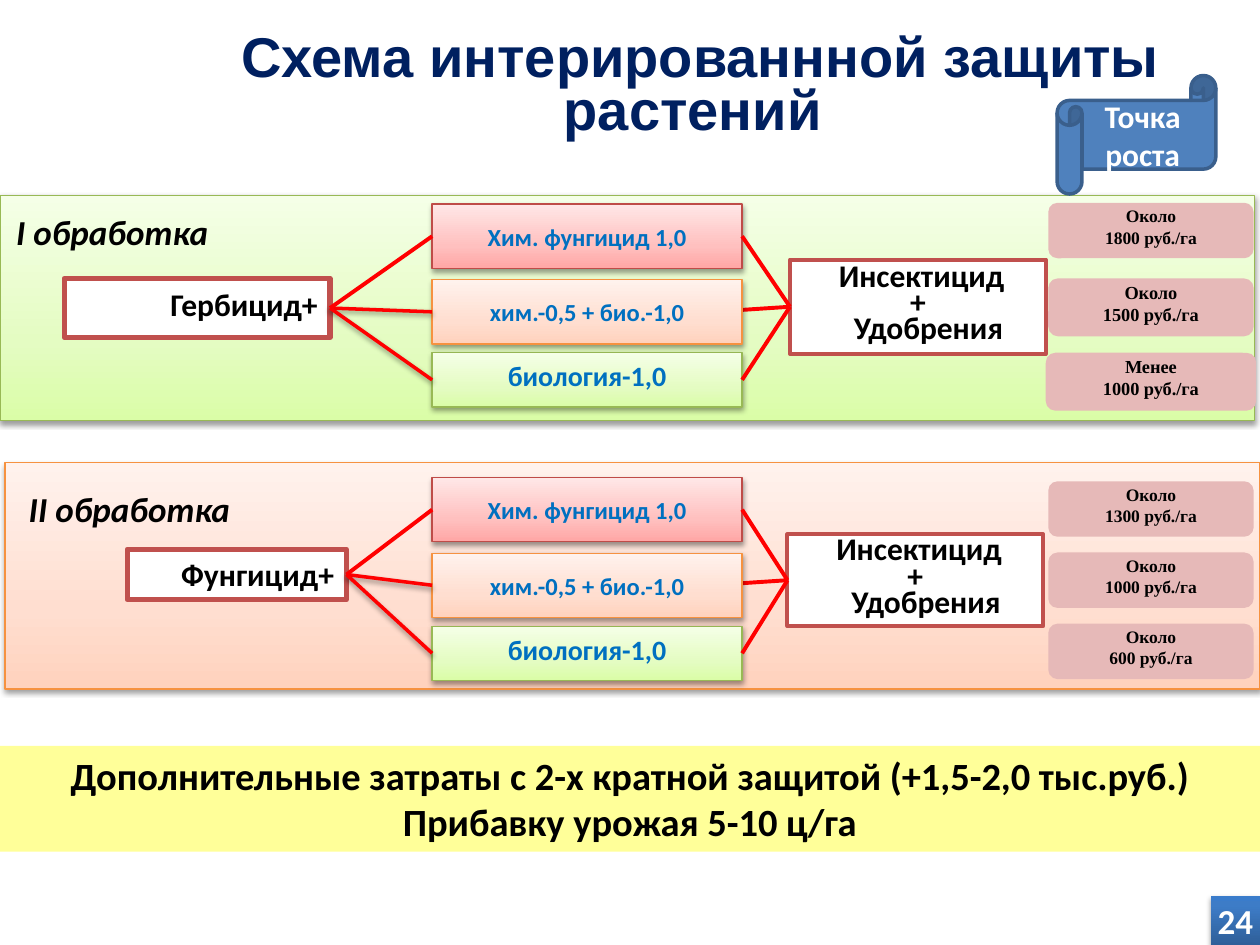
from copy import deepcopy

from lxml import etree
from pptx import Presentation
from pptx.dml.color import RGBColor
from pptx.enum.shapes import MSO_CONNECTOR, MSO_SHAPE
from pptx.enum.text import MSO_ANCHOR, MSO_AUTO_SIZE, PP_ALIGN
from pptx.oxml.ns import qn
from pptx.util import Inches, Pt

RECTANGLE = MSO_SHAPE.RECTANGLE
ROUNDED = MSO_SHAPE.ROUNDED_RECTANGLE
SCROLL = MSO_SHAPE.HORIZONTAL_SCROLL
STRAIGHT = MSO_CONNECTOR.STRAIGHT
TOP, MIDDLE = MSO_ANCHOR.TOP, MSO_ANCHOR.MIDDLE
LEFT, CENTER, RIGHT = PP_ALIGN.LEFT, PP_ALIGN.CENTER, PP_ALIGN.RIGHT
LEFT_SIDE, RIGHT_SIDE = 1, 3

WIDTH, HEIGHT = Inches(10), Inches(7.5)
COLUMN, ROW = WIDTH / 100, HEIGHT / 75

COLORS = {
    "title": "002060", "text": "000000", "option": "0070C0", "white": "FFFFFF",
    "banner": "FFFF99", "price": "E6B9B8", "frame": "C0504D", "arrow": "FF0000",
    "scroll": "4F81BD", "scroll_line": "3A5F8C",
    "green_line": "98B955", "orange_line": "F69240", "red_line": "BF4C48",
}
GRADIENTS = {
    "green": [(0, "DAFDA7"), (0.35, "E4FCC2"), (1, "F5FFE7")],
    "orange": [(0, "FFD2BD"), (0.35, "FFDED0"), (1, "FFF2ED")],
    "red": [(0, "FFA6A5"), (0.35, "FFC0BF"), (1, "FFE7E7")],
    "blue": [(0, "2F5F99"), (0.8, "3D7CC7"), (1, "3A7CCB")],
}

OPTION_LEFT, OPTION_WIDTH = 34.3, 24.6
STAGES = [
    {
        "name": "I обработка", "name_at": (0.3, 16.2, 23.3, 5.1),
        "panel": (0, 15.5, 99.6, 17.9), "tint": "green",
        "start": "Гербицид+", "start_at": (5.1, 22.1, 21.1, 4.7),
        "finish_at": (62.7, 20.6, 20.3, 7.5), "options_top": 16.2,
        "prices": [
            ("Около", "1800 руб./га", (83.2, 16.1, 16.3, 4.4), 10),
            ("Около", "1500 руб./га", (83.2, 22.1, 16.3, 4.6), 10.5),
            ("Менее", "1000 руб./га", (83, 28, 16.7, 4.6), 10.5),
        ],
    },
    {
        "name": "II обработка", "name_at": (1.3, 38.2, 24.3, 5.1),
        "panel": (0.4, 36.7, 99.6, 18), "tint": "orange",
        "start": "Фунгицид+", "start_at": (10.1, 43.6, 17.4, 4),
        "finish_at": (62.5, 42.4, 20.3, 7.3), "options_top": 37.9,
        "prices": [
            ("Около", f"{price} руб./га", (83.2, 38.2 + 5.65 * index, 16.3, 4.4), 10)
            for index, price in enumerate((1300, 1000, 600))
        ],
    },
]


def color(name):
    return RGBColor.from_string(COLORS[name])


def place(left, top, width, height):
    return [round(value) for value in
            (left * COLUMN, top * ROW, width * COLUMN, height * ROW)]


def add_shadow(shape, alpha=38):
    effects = shape._element.spPr.find(qn("a:effectLst"))
    shadow = etree.SubElement(effects, qn("a:outerShdw"), blurRad=str(Pt(3.1)),
                              dist=str(Pt(1.6)), dir="5400000", rotWithShape="0")
    black = etree.SubElement(shadow, qn("a:srgbClr"), val="000000")
    etree.SubElement(black, qn("a:alpha"), val=str(alpha * 1000))


def fill_gradient(shape, stops):
    shape.fill.gradient()
    shape.fill.gradient_angle = 90
    stop_list = shape._element.spPr.find(".//" + qn("a:gsLst"))
    stop_list.append(deepcopy(stop_list[0]))
    for stop, (position, value) in zip(shape.fill.gradient_stops, stops):
        stop.position = position
        stop.color.rgb = RGBColor.from_string(value)


def add_box(slide, area, fill, line=None, weight=0.75, kind=RECTANGLE):
    shape = slide.shapes.add_shape(kind, *place(*area))
    shape.shadow.inherit = False
    if fill in GRADIENTS:
        fill_gradient(shape, GRADIENTS[fill])
        add_shadow(shape)
    else:
        shape.fill.solid()
        shape.fill.fore_color.rgb = color(fill)
    if line:
        shape.line.color.rgb = color(line)
        shape.line.width = Pt(weight)
    else:
        shape.line.fill.background()
    return shape


def write(shape, lines, size, ink="text", font="Calibri", align=CENTER,
          anchor=TOP, spacing=None, indents=(), italic=None):
    frame = shape.text_frame
    frame.word_wrap = True
    frame.auto_size = MSO_AUTO_SIZE.NONE
    frame.vertical_anchor = anchor
    for index, text in enumerate(lines):
        paragraph = frame.paragraphs[0] if index == 0 else frame.add_paragraph()
        paragraph.alignment = align
        if spacing:
            paragraph.line_spacing = Pt(spacing)
        if indents:
            paragraph._p.get_or_add_pPr().set("marL", str(Inches(indents[index])))
        run = paragraph.add_run()
        run.text = text
        run.font.name = font
        run.font.size = Pt(size)
        run.font.bold = True
        run.font.italic = italic
        run.font.color.rgb = color(ink)


def add_link(slide, start, end=None, end_point=(0, 0), weight=2.25, shadow=False,
             start_side=RIGHT_SIDE, end_side=LEFT_SIDE):
    x, y = place(*end_point, 0, 0)[:2]
    link = slide.shapes.add_connector(STRAIGHT, x, y, x, y)
    link.begin_connect(start, start_side)
    if end is not None:
        link.end_connect(end, end_side)
    link.line.color.rgb = color("arrow")
    link.line.width = Pt(weight)
    etree.SubElement(link._element.spPr, qn("a:effectLst"))
    if shadow:
        add_shadow(link)


def add_option(slide, text, top, height, tint, size, anchor=MIDDLE):
    shape = add_box(slide, (OPTION_LEFT, top, OPTION_WIDTH, height), tint, f"{tint}_line")
    write(shape, [text], size, "option", anchor=anchor)
    return shape


def add_price(slide, word, amount, area, size):
    shape = add_box(slide, area, "price", kind=ROUNDED)
    shape.text_frame.margin_top = shape.text_frame.margin_bottom = 0
    write(shape, [word, amount], size, font="Times New Roman")


def add_stage(slide, stage):
    add_box(slide, stage["panel"], stage["tint"], f"{stage['tint']}_line")
    for price in stage["prices"]:
        add_price(slide, *price)
    start = add_box(slide, stage["start_at"], "white", "frame", 3)
    write(start, [stage["start"]], 18, align=RIGHT)
    finish = add_box(slide, stage["finish_at"], "white", "frame")
    finish.line.width = Pt(2.25)
    write(finish, ["Инсектицид", "+", "Удобрения"], 18, anchor=MIDDLE,
          spacing=15, indents=(0.06, 0, 0.17))

    top = stage["options_top"]
    add_link(slide, finish, end_point=(48.1, top + 9.1), start_side=LEFT_SIDE)
    biological = add_option(slide, "биология-1,0", top + 11.8, 4.3, "green", 16, TOP)
    mixed = add_option(slide, "хим.-0,5 + био.-1,0", top + 6, 5.1, "orange", 14)
    chemical = add_option(slide, "Хим. фунгицид 1,0", top, 5.1, "red", 14)
    for option in (mixed, biological):
        add_link(slide, start, option, weight=2, shadow=True)
    add_link(slide, start, chemical)
    for option in (chemical, biological):
        add_link(slide, option, finish)

    name = slide.shapes.add_textbox(*place(*stage["name_at"]))
    write(name, [stage["name"]], 20, align=LEFT, italic=True)


def main():
    presentation = Presentation()
    presentation.slide_width, presentation.slide_height = WIDTH, HEIGHT
    slide = presentation.slides.add_slide(presentation.slide_layouts[5])

    title = slide.shapes.title
    title.left, title.top, title.width, title.height = place(16.1, 2.4, 79, 9.4)
    write(title, ["Схема интерированнной защиты растений "], 32, "title", "Arial",
          spacing=30)

    banner = add_box(slide, (0, 59.2, 100, 8.4), "banner")
    write(banner, ["Дополнительные затраты с 2-х кратной защитой (+1,5-2,0 тыс.руб.)",
                   "Прибавку урожая 5-10 ц/га"], 22)

    for stage in STAGES:
        add_stage(slide, stage)

    number = add_box(slide, (96.1, 71.1, 3.9, 3.9), "blue")
    number.text_frame.margin_left = number.text_frame.margin_right = 0
    write(number, ["24"], 20, "white", anchor=MIDDLE)

    scroll = add_box(slide, (83.9, 6, 12.6, 9.4), "scroll", "scroll_line", 2, SCROLL)
    scroll.adjustments[0] = 0.21
    write(scroll, ["Точка роста"], 18, "white", anchor=MIDDLE)

    presentation.save("out.pptx")


if __name__ == "__main__":
    main()
